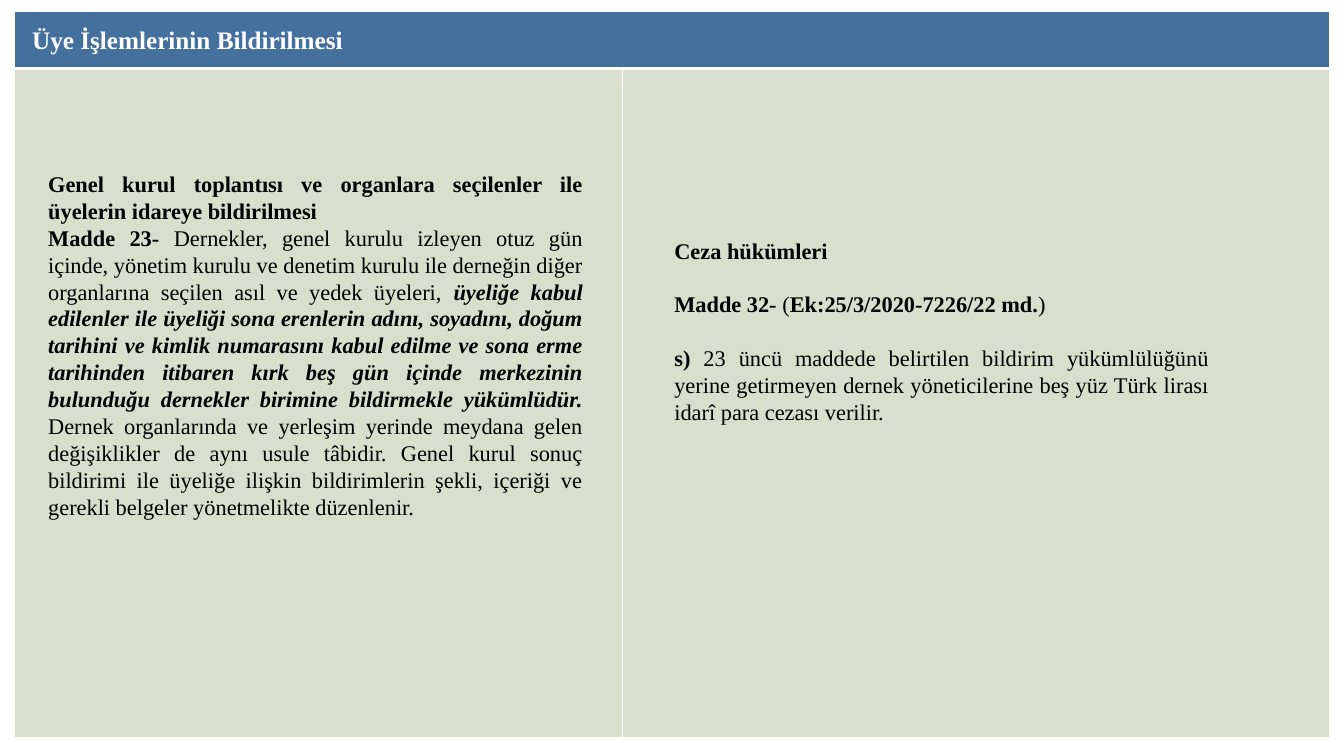
import pptx
import pptx.util
import pptx.oxml.ns
import pptx.dml.color
import pptx.enum.text
from lxml import etree
from pptx.util import Inches

FONT = "Times New Roman"
WHITE = "FFFFFF"
BLACK = "000000"
BLUE = "44709D"
SAGE = "D9DECD"

LEFT = [
    (0, [("Genel kurul toplantısı ve organlara seçilenler ile üyelerin idareye bildirilmesi", "b")]),
    (0, [
        ("Madde 23- ", "b"),
        ("Dernekler, genel kurulu izleyen otuz gün içinde, yönetim kurulu ve denetim kurulu "
         "ile derneğin diğer organlarına seçilen asıl ve yedek üyeleri, ", ""),
        ("üyeliğe kabul edilenler ile üyeliği sona erenlerin adını, soyadını, doğum tarihini ve "
         "kimlik numarasını kabul edilme ve sona erme tarihinden itibaren kırk beş gün içinde "
         "merkezinin bulunduğu dernekler birimine bildirmekle yükümlüdür. ", "bi"),
        ("Dernek organlarında ve yerleşim yerinde meydana gelen değişiklikler de aynı usule "
         "tâbidir. Genel kurul sonuç bildirimi ile üyeliğe ilişkin bildirimlerin şekli, içeriği "
         "ve gerekli belgeler yönetmelikte düzenlenir.", ""),
    ]),
]
RIGHT = [
    (0, [("Ceza hükümleri", "b")]),
    (19.2, [("Madde 32- ", "b"), ("(", ""), ("Ek:25/3/2020-7226/22 md.", "b"), (")", "")]),
    (19.2, [
        ("s) ", "b"),
        ("23 üncü maddede belirtilen bildirim yükümlülüğünü yerine getirmeyen dernek "
         "yöneticilerine beş yüz Türk lirası idarî para cezası verilir.", ""),
    ]),
]
TITLE = [(0, [("Üye İşlemlerinin Bildirilmesi", "b")])]


def color(code):
    return pptx.dml.color.RGBColor.from_string(code)


def border(cell, side, width):
    props = cell._tc.get_or_add_tcPr()
    size = str(pptx.util.Pt(width))
    line = etree.SubElement(props, pptx.oxml.ns.qn("a:ln" + side), w=size)
    fill = etree.SubElement(line, pptx.oxml.ns.qn("a:solidFill"))
    etree.SubElement(fill, pptx.oxml.ns.qn("a:srgbClr"), val=WHITE)


def paint(cell, code, top, bottom):
    for side, width in zip("LRTB", (1, 1, top, bottom)):
        border(cell, side, width)
    cell.fill.solid()
    cell.fill.fore_color.rgb = color(code)


def add_grid(slide):
    frame = slide.shapes.add_table(2, 2, Inches(0.14), Inches(0.11), Inches(13.05), Inches(7.21))
    grid = frame.table
    for col, width in zip(grid.columns, (6.03, 7.02)):
        col.width = Inches(width)
    for row, height in zip(grid.rows, (0.57, 6.64)):
        row.height = Inches(height)
    for col in range(2):
        paint(grid.cell(0, col), BLUE, 1, 3)
        paint(grid.cell(1, col), SAGE, 3, 1)
    grid.cell(0, 0).merge(grid.cell(0, 1))


def add_text(slide, place, paras, size, code, align, wrap=True):
    box = slide.shapes.add_textbox(*map(Inches, place))
    frame = box.text_frame
    frame.word_wrap = wrap
    frame.auto_size = pptx.enum.text.MSO_AUTO_SIZE.SHAPE_TO_FIT_TEXT
    for index, (gap, parts) in enumerate(paras):
        para = frame.add_paragraph() if index else frame.paragraphs[0]
        para.alignment = align
        if gap:
            para.space_before = pptx.util.Pt(gap)
        for text, style in parts:
            run = para.add_run()
            run.text = text
            font = run.font
            font.name = FONT
            font.size = pptx.util.Pt(size)
            font.bold = "b" in style
            font.italic = "i" in style
            font.color.rgb = color(code)


def main():
    deck = pptx.Presentation()
    deck.slide_width = Inches(13.33)
    deck.slide_height = Inches(7.5)
    slide = deck.slides.add_slide(deck.slide_layouts[6])
    align = pptx.enum.text.PP_ALIGN
    add_grid(slide)
    add_text(slide, (0.38, 1.64, 5.5, 3.6), LEFT, 16, BLACK, align.JUSTIFY)
    add_text(slide, (6.59, 2.3, 5.5, 2.03), RIGHT, 16, BLACK, align.JUSTIFY)
    add_text(slide, (0.22, 0.19, 3.32, 0.4), TITLE, 18, WHITE, align.LEFT, False)
    deck.save("out.pptx")


if __name__ == "__main__":
    main()
